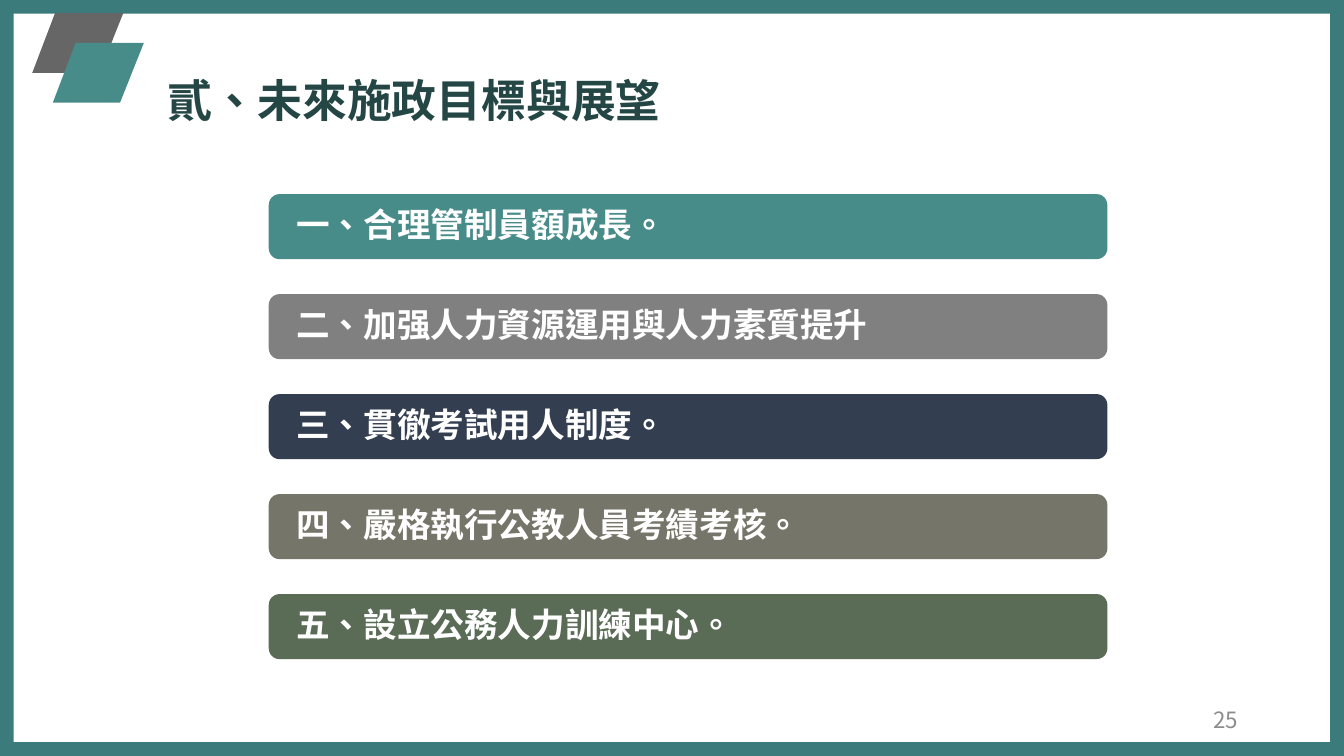
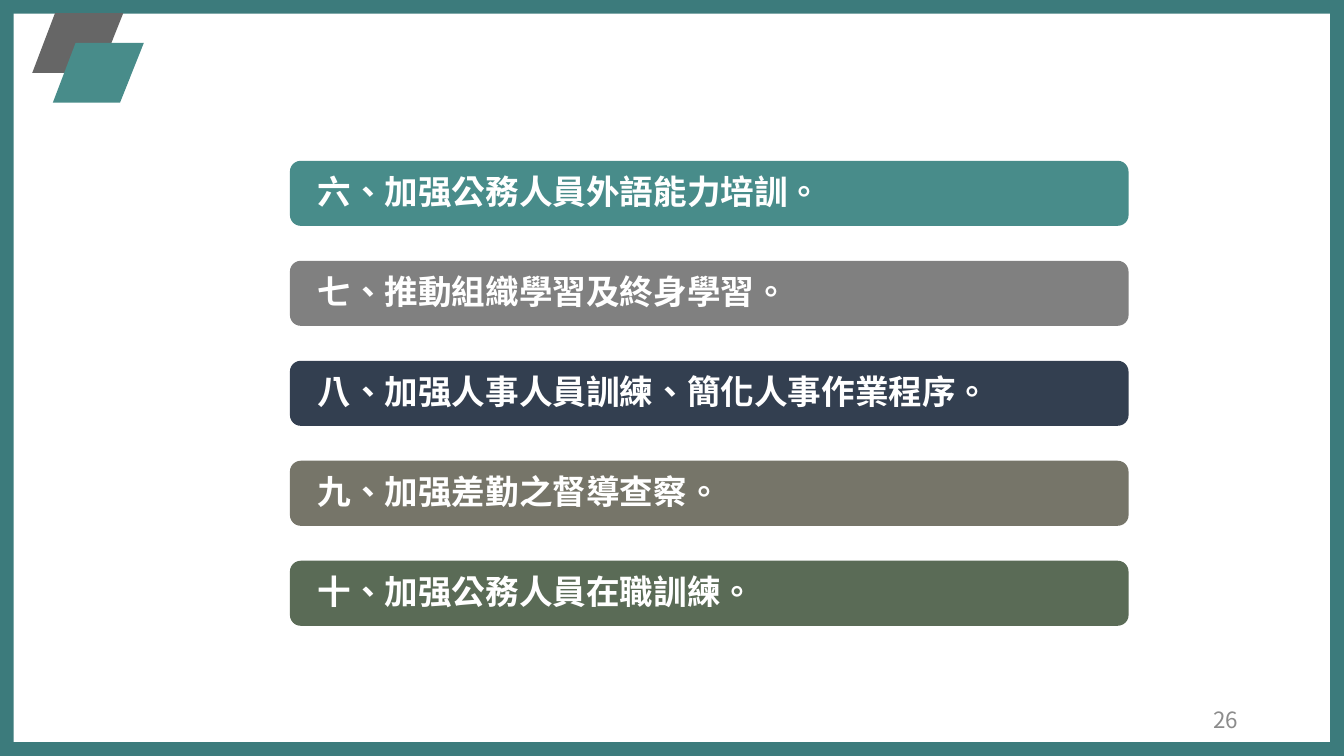
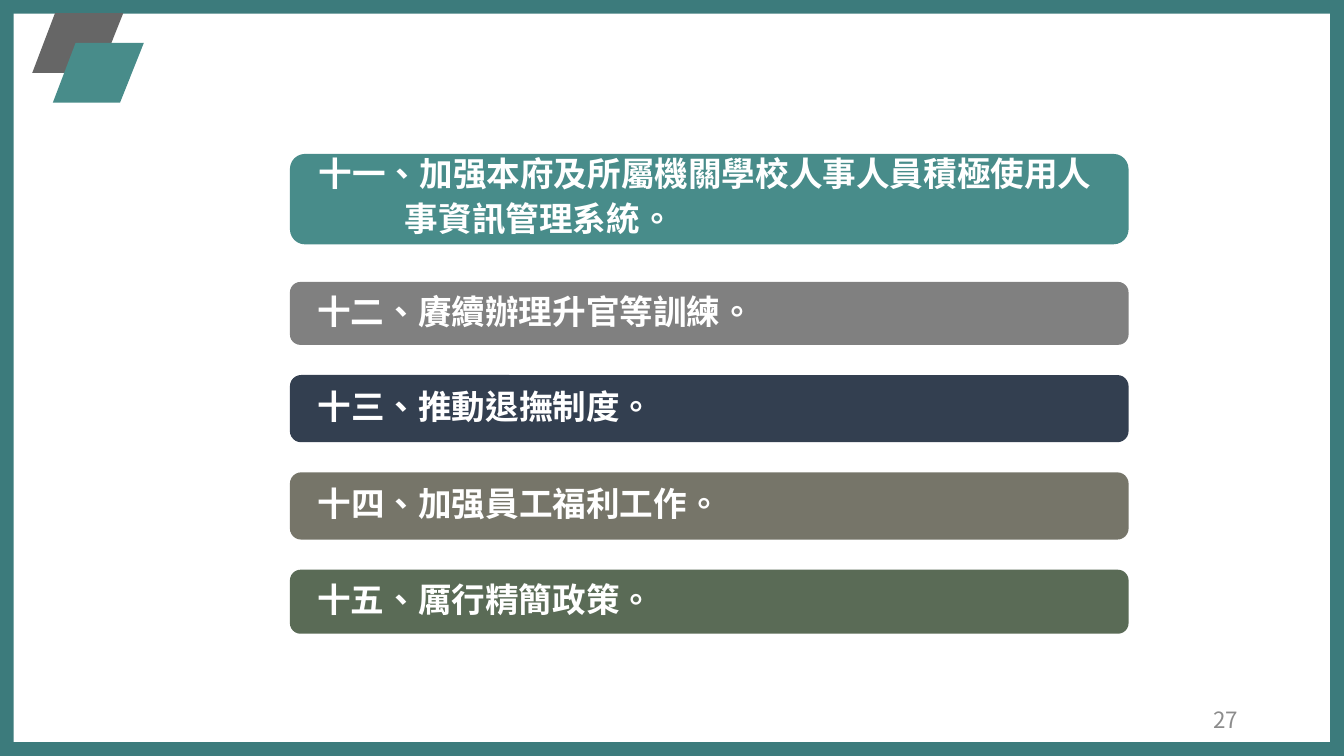
"""Build three framed slides that list future policy goals as coloured bars."""
from dataclasses import dataclass
from itertools import cycle
from typing import Any

from lxml.etree import SubElement
from pptx import Presentation
from pptx.dml.color import RGBColor
from pptx.enum.shapes import MSO_SHAPE
from pptx.enum.text import MSO_ANCHOR, MSO_AUTO_SIZE, PP_ALIGN
from pptx.oxml.ns import qn
from pptx.util import Cm, Pt

COLORS = {
    "frame": "3C7B7C", "back_mark": "666666", "front_mark": "488C8A",
    "title": "244645", "number": "8C8C8C", "white": "FFFFFF",
}
BAR_COLORS = ("488C8A", "808080", "333F50", "767569", "5A6B56")
CJK_FONT = "Noto Sans CJK SC"
TITLE_FONT = {"name": CJK_FONT, "size": Pt(24), "bold": True}
BAR_FONT = {"name": "Calibri", "size": Pt(18), "bold": True}
NUMBER_FONT = {"name": CJK_FONT, "size": Pt(12), "bold": False}
BAR_FRAME = {
    "word_wrap": True, "vertical_anchor": MSO_ANCHOR.MIDDLE,
    "margin_left": Cm(0.46), "margin_right": Cm(0.46),
    "margin_top": 0, "margin_bottom": 0,
}
BAR_PARAGRAPH = {"alignment": PP_ALIGN.LEFT, "line_spacing": 0.9, "space_after": Pt(6.3)}
BAR_WIDTH = 15.85
CONTINUATION_INDENT = 1.63
TITLE_LAYOUT, BLANK_LAYOUT = 5, 6


@dataclass(frozen=True)
class Box:
    """A rectangle in centimetres."""
    left: float
    top: float
    width: float
    height: float

    def lengths(self) -> tuple:
        """Return the four sides as lengths."""
        return Cm(self.left), Cm(self.top), Cm(self.width), Cm(self.height)


@dataclass(frozen=True)
class Bar:
    """A goal bar, with the gap below it."""
    lines: tuple[str, ...]
    height: float = 1.23
    gap: float = 0.66


@dataclass(frozen=True)
class GoalSlide:
    """One slide of stacked goal bars."""
    number: int
    left: float
    top: float
    bars: tuple[Bar, ...]
    title: str = ""


FRAME_BANDS = (
    Box(0, 0, 25.4, 0.26), Box(0, 0, 0.26, 14.29),
    Box(0, 14.03, 25.2, 0.26), Box(25.14, 0.02, 0.26, 14.27),
)
MARK_OUTLINE = ((1.04, 0.25), (2.33, 0.25), (1.88, 1.38), (0.61, 1.38))
MARKS = (("back_mark", 0, 0), ("front_mark", 0.39, 0.56))
TITLE_BOX = Box(2.92, 1.24, 9.9, 1.27)
NUMBER_BOX = Box(17.93, 13.23, 5.72, 0.76)

GOAL_SLIDES = (
    GoalSlide(25, 5.08, 3.67, (
        Bar(("一、合理管制員額成長。",)),
        Bar(("二、加强人力資源運用與人力素質提升",)),
        Bar(("三、貫徹考試用人制度。",)),
        Bar(("四、嚴格執行公教人員考績考核。",)),
        Bar(("五、設立公務人力訓練中心。",)),
    ), "貳、未來施政目標與展望"),
    GoalSlide(26, 5.48, 3.04, (
        Bar(("六、加强公務人員外語能力培訓。",)),
        Bar(("七、推動組織學習及終身學習。",)),
        Bar(("八、加强人事人員訓練、簡化人事作業程序。",)),
        Bar(("九、加强差勤之督導查察。",)),
        Bar(("十、加强公務人員在職訓練。",)),
    )),
    GoalSlide(27, 5.48, 2.91, (
        Bar(("十一、加强本府及所屬機關學校人事人員積極使用人", "事資訊管理系統。"), 1.71, 0.71),
        Bar(("十二、賡續辦理升官等訓練。",), 1.19, 0.57),
        Bar(("十三、推動退撫制度。",), 1.27, 0.57),
        Bar(("十四、加强員工福利工作。",), 1.27, 0.57),
        Bar(("十五、厲行精簡政策。",), 1.21),
    )),
)


def apply_format(target: Any, values: dict[str, Any]) -> None:
    """Set each named attribute on the target."""
    for name, value in values.items():
        setattr(target, name, value)


def write_run(paragraph: Any, text: str, font: dict[str, Any], color: str) -> None:
    """Add formatted Traditional Chinese text to a paragraph."""
    run = paragraph.add_run()
    run.text = text
    apply_format(run.font, font)
    run.font.color.rgb = RGBColor.from_string(color)
    properties = run._r.get_or_add_rPr()
    properties.set("lang", "zh-TW")
    SubElement(properties, qn("a:ea")).set("typeface", CJK_FONT)


def paint(shape: Any, color: str) -> None:
    """Give a shape a flat fill without line or shadow."""
    shape.fill.solid()
    shape.fill.fore_color.rgb = RGBColor.from_string(color)
    shape.line.fill.background()
    shape.shadow.inherit = False


def draw_frame(slide: Any) -> None:
    """Draw the border bands and the two corner marks."""
    for band in FRAME_BANDS:
        paint(slide.shapes.add_shape(MSO_SHAPE.RECTANGLE, *band.lengths()), COLORS["frame"])
    for color, shift_x, shift_y in MARKS:
        points = [(Cm(x + shift_x), Cm(y + shift_y)) for x, y in MARK_OUTLINE]
        builder = slide.shapes.build_freeform(*points[0])
        builder.add_line_segments(points[1:], close=True)
        paint(builder.convert_to_shape(), COLORS[color])


def draw_title(slide: Any, text: str) -> None:
    """Place and fill the title placeholder."""
    title = slide.shapes.title
    title.left, title.top, title.width, title.height = TITLE_BOX.lengths()
    apply_format(title.text_frame, {
        "word_wrap": False, "auto_size": MSO_AUTO_SIZE.NONE, "vertical_anchor": MSO_ANCHOR.TOP,
    })
    paragraph = title.text_frame.paragraphs[0]
    paragraph.alignment = PP_ALIGN.LEFT
    write_run(paragraph, text, TITLE_FONT, COLORS["title"])


def draw_bar(slide: Any, bar: Bar, left: float, top: float, color: str) -> None:
    """Draw one rounded bar with its goal."""
    box = Box(left, top, BAR_WIDTH, bar.height)
    shape = slide.shapes.add_shape(MSO_SHAPE.ROUNDED_RECTANGLE, *box.lengths())
    paint(shape, color)
    frame = shape.text_frame
    apply_format(frame, BAR_FRAME)
    for index, line in enumerate(bar.lines):
        paragraph = frame.add_paragraph() if index else frame.paragraphs[0]
        apply_format(paragraph, BAR_PARAGRAPH)
        if len(bar.lines) > 1:
            paragraph.line_spacing = Pt(18)
        if index:
            paragraph._p.get_or_add_pPr().set("marL", str(Cm(CONTINUATION_INDENT)))
        write_run(paragraph, line, BAR_FONT, COLORS["white"])


def draw_number(slide: Any, number: int) -> None:
    """Write the slide number at the lower right."""
    frame = slide.shapes.add_textbox(*NUMBER_BOX.lengths()).text_frame
    apply_format(frame, {"word_wrap": True, "vertical_anchor": MSO_ANCHOR.MIDDLE})
    paragraph = frame.paragraphs[0]
    paragraph.alignment = PP_ALIGN.RIGHT
    write_run(paragraph, str(number), NUMBER_FONT, COLORS["number"])


def build_slide(presentation: Any, goals: GoalSlide) -> None:
    """Add one goal slide to the presentation."""
    layout = TITLE_LAYOUT if goals.title else BLANK_LAYOUT
    slide = presentation.slides.add_slide(presentation.slide_layouts[layout])
    draw_frame(slide)
    if goals.title:
        draw_title(slide, goals.title)
    top = goals.top
    for bar, color in zip(goals.bars, cycle(BAR_COLORS)):
        draw_bar(slide, bar, goals.left, top, color)
        top += bar.height + bar.gap
    draw_number(slide, goals.number)


def main() -> None:
    """Build and save the presentation."""
    presentation = Presentation()
    presentation.slide_width, presentation.slide_height = Cm(25.4), Cm(14.29)
    for goals in GOAL_SLIDES:
        build_slide(presentation, goals)
    presentation.save("out.pptx")


if __name__ == "__main__":
    main()
